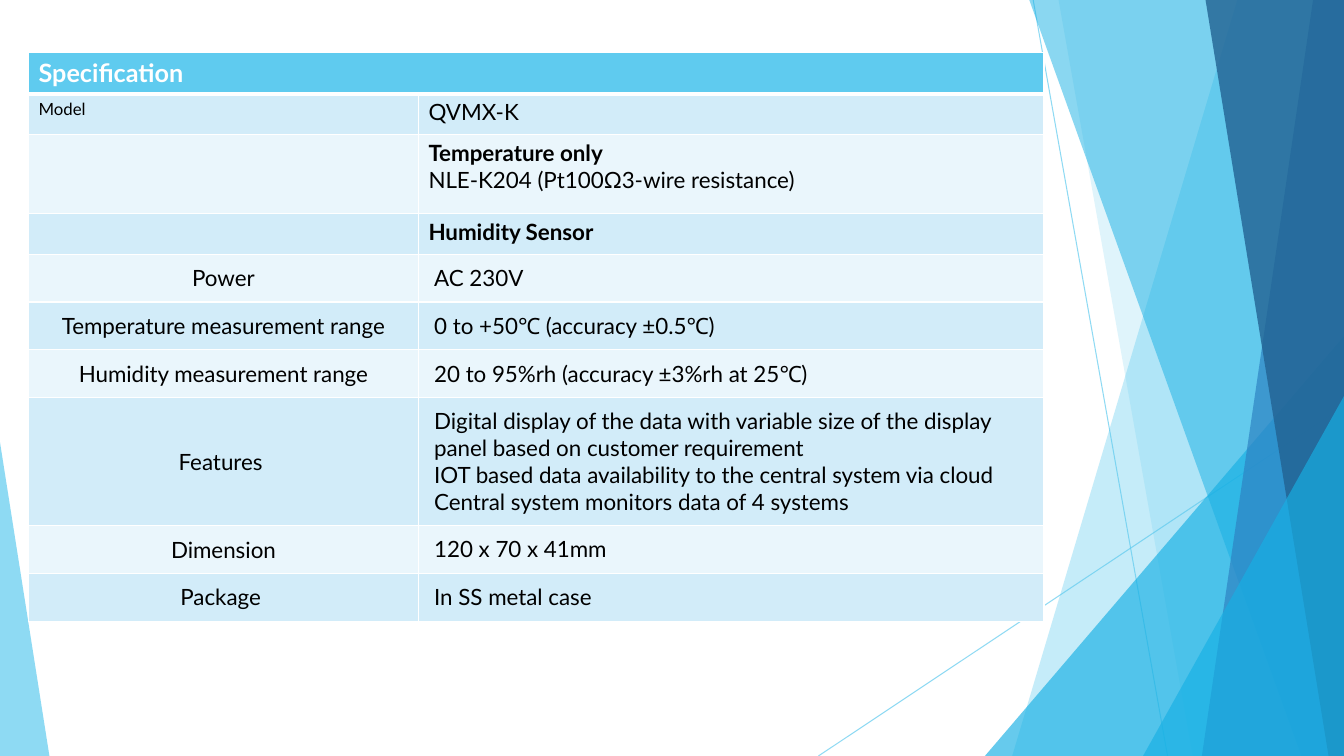
"""Builds a sensor specification slide: a table on a faceted blue backdrop."""
import pptx
import pptx.dml.color
import pptx.enum.shapes
import pptx.enum.text
import pptx.oxml.ns
import pptx.util
from lxml import etree

Pt = pptx.util.Pt
qn = pptx.oxml.ns.qn
WIDTH, HEIGHT = 960, 540


def colour(hex_code):
    return pptx.dml.color.RGBColor.from_string(hex_code)


def set_opacity(properties, percent):
    for tint in properties.iter(qn("a:srgbClr")):
        etree.SubElement(tint, qn("a:alpha"), val=str(percent * 1000))


deck = pptx.Presentation()
deck.slide_width, deck.slide_height = Pt(WIDTH), Pt(HEIGHT)
slide = deck.slides.add_slide(deck.slide_layouts[6])
shapes = slide.shapes

for ends in [(738, 0, 834, HEIGHT), (WIDTH, 290, 584.6, HEIGHT)]:
    ray = shapes.add_connector(
        pptx.enum.shapes.MSO_CONNECTOR.STRAIGHT, *[Pt(value) for value in ends])
    ray.line.color.rgb = colour("5FCBEF")
    ray.line.width = Pt(0.75)
    properties = ray.element.spPr
    set_opacity(properties, 70)
    etree.SubElement(properties, qn("a:effectLst"))

bands_and_triangles = [
    ("5FCBEF", 36, "band", {"top_x": 884, "foot_x": 723}),
    ("5FCBEF", 20, "band", {"top_x": 756, "foot_x": 852}),
    ("17B0E4", 66, "triangle", {"left": 703.5, "top": 240, "width": 256.5, "apex": 1}),
    ("17B0E4", 50, "band", {"top_x": 735, "foot_x": 929.5}),
    ("2E83C3", 70, "band", {"top_x": 938, "foot_x": 858.5}),
    ("226292", 80, "band", {"top_x": 861, "foot_x": 949}),
    ("17B0E4", 66, "triangle", {"left": 816.5, "top": 283, "width": 143.5, "apex": 1}),
    ("5FCBEF", 70, "triangle", {"left": 0, "top": 316, "width": 35.3, "apex": 0}),
]
for tint, opacity, kind, measures in bands_and_triangles:
    if kind == "band":
        outline = shapes.build_freeform(Pt(measures["top_x"]), Pt(-0.7))
        outline.add_line_segments([
            (Pt(WIDTH), Pt(-0.7)), (Pt(WIDTH), Pt(HEIGHT)),
            (Pt(measures["foot_x"]), Pt(HEIGHT))])
        facet = outline.convert_to_shape()
    else:
        facet = shapes.add_shape(
            pptx.enum.shapes.MSO_SHAPE.ISOSCELES_TRIANGLE,
            Pt(measures["left"]), Pt(measures["top"]),
            Pt(measures["width"]), Pt(HEIGHT - measures["top"]))
        facet.adjustments[0] = measures["apex"]
    facet.shadow.inherit = False
    facet.line.fill.background()
    facet.fill.solid()
    facet.fill.fore_color.rgb = colour(tint)
    set_opacity(facet.element.spPr, opacity)

entries = [
    ("Specification", "", 29.2),
    ("Model", "QVMX-K", 29.2),
    ("", "Temperature only\nNLE-K204 (Pt100Ω3-wire resistance)", 56.2),
    ("", "Humidity Sensor", 29.2),
    ("Power", "AC 230V", 34.2),
    ("Temperature measurement range", "0 to +50℃ (accuracy ±0.5℃)", 34.2),
    ("Humidity measurement range", "20 to 95%rh (accuracy ±3%rh at 25℃)", 34.2),
    ("Features ",
     "Digital display of the data with variable size of the display panel "
     "based on customer requirement\n"
     "IOT based data availability to the central system via cloud\n"
     "Central system monitors data of 4 systems", 91.2),
    ("Dimension", "120 x 70 x 41mm", 34.2),
    ("Package ", "In SS metal case", 34.2),
]
bold_lines = ("Specification", "Temperature only", "Humidity Sensor")
special_sizes = {"Specification": 18, "Model": 12}
FIRST_PADDED_ROW = 4

specification = shapes.add_table(
    len(entries), 2, Pt(20.4), Pt(37.8), Pt(725.4),
    Pt(sum(entry[2] for entry in entries))).table
specification.horz_banding = False
specification.columns[0].width = Pt(278.5)
specification.columns[1].width = Pt(446.9)

for row, (label, detail, height) in enumerate(entries):
    specification.rows[row].height = Pt(height)
    for column, wording in enumerate((label, detail)):
        cell = specification.cell(row, column)
        cell.text_frame.text = wording
        if row >= FIRST_PADDED_ROW:
            cell.margin_left = cell.margin_right = Pt(11.25)
            cell.margin_top = cell.margin_bottom = Pt(7.2)
            if column == 0:
                cell.vertical_anchor = pptx.enum.text.MSO_ANCHOR.MIDDLE
        for paragraph in cell.text_frame.paragraphs:
            paragraph.font.size = Pt(16)
            if row >= FIRST_PADDED_ROW and column == 0:
                paragraph.alignment = pptx.enum.text.PP_ALIGN.CENTER
            for run in paragraph.runs:
                run.font.name = "Lato"
                run.font.size = Pt(special_sizes.get(run.text, 16))
                run.font.bold = run.text in bold_lines
                run.font.color.rgb = colour("000000" if row else "FFFFFF")
        cell_properties = cell._tc.get_or_add_tcPr()
        for side in ("L", "R", "T", "B"):
            heavy = (row, side) in ((0, "B"), (1, "T"))
            border = etree.SubElement(
                cell_properties, qn(f"a:ln{side}"), w=str(Pt(3 if heavy else 1)))
            paint = etree.SubElement(border, qn("a:solidFill"))
            etree.SubElement(paint, qn("a:srgbClr"), val="FFFFFF")
        cell.fill.solid()
        band_tint = "D2ECF9" if row % 2 else "EAF6FC"
        cell.fill.fore_color.rgb = colour(band_tint if row else "5FCBEF")
specification.cell(0, 0).merge(specification.cell(0, 1))

deck.save("out.pptx")
